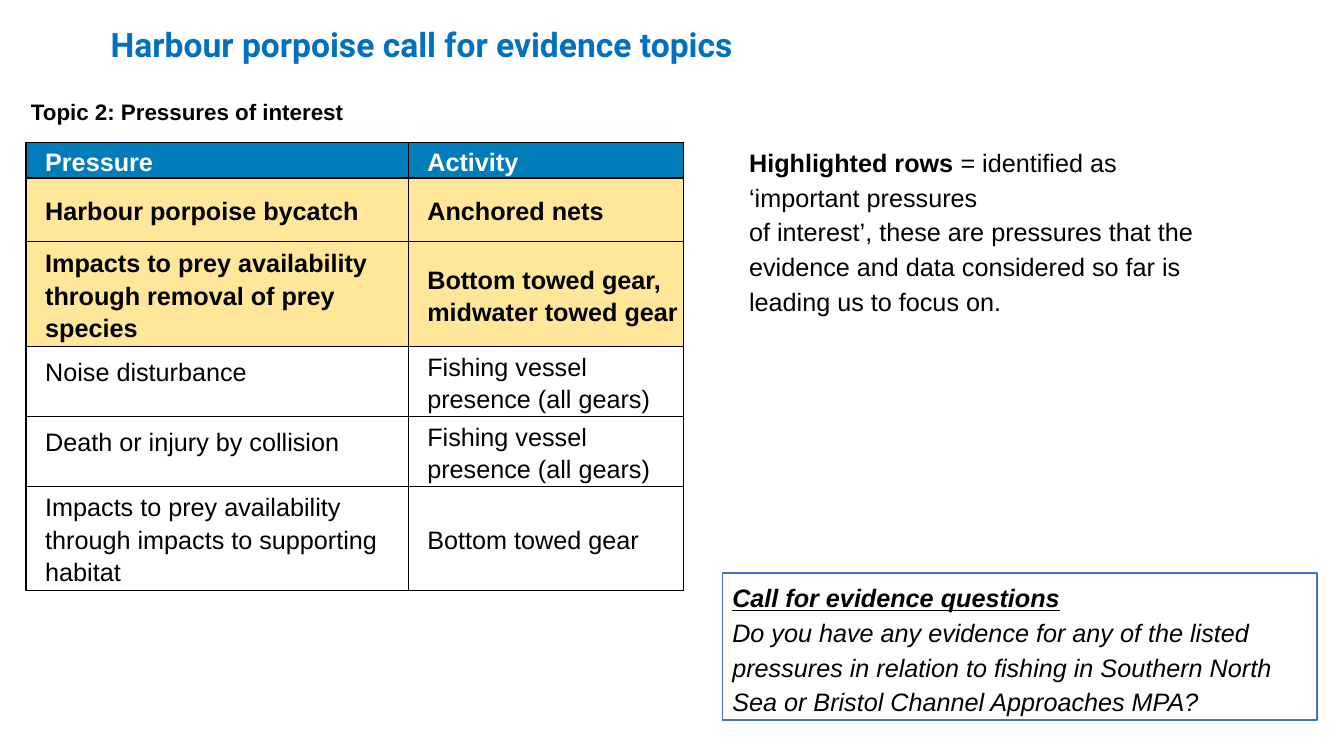
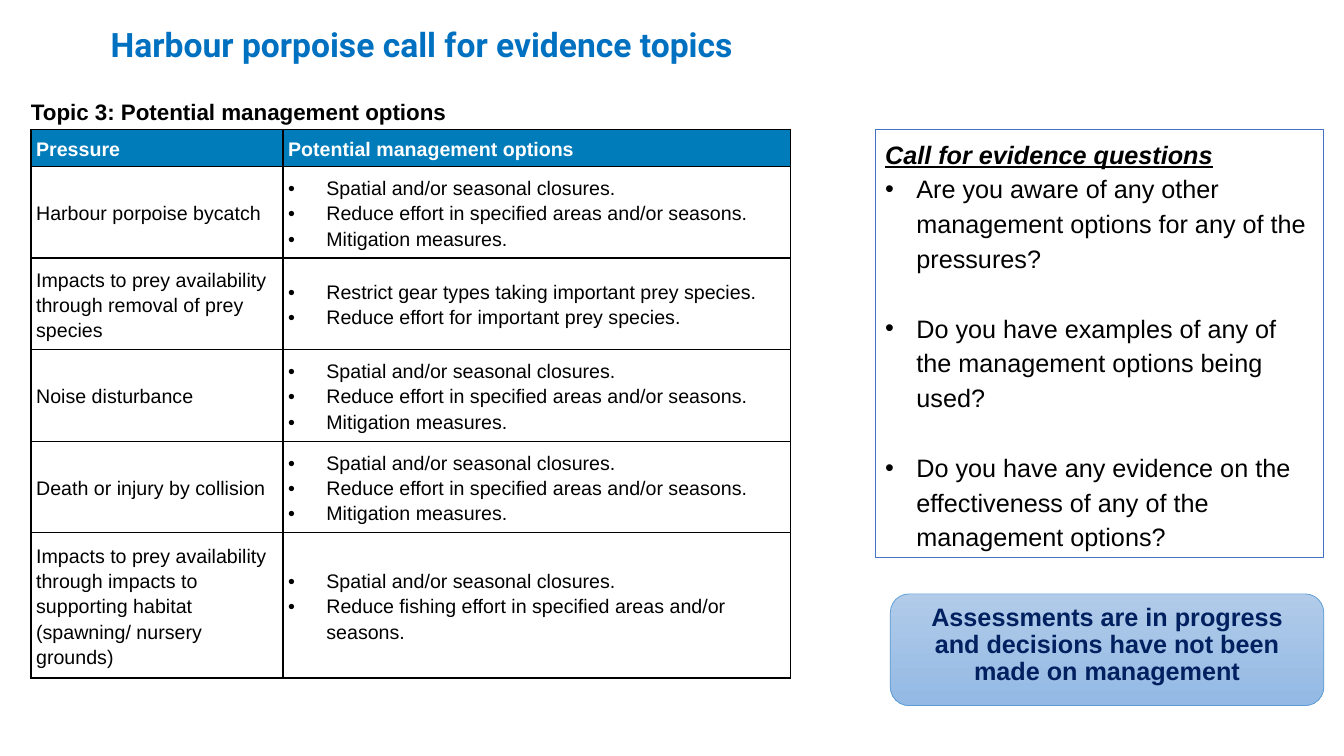
"""Build two slides on the harbour porpoise call for evidence topics."""
import pptx
import pptx.dml.color
import pptx.enum.shapes
import pptx.enum.text
import pptx.util
import lxml.etree

COLOURS = {
    "title": "0070C0", "header": "007CBA", "highlight": "FFE699", "outline": "4472C4",
    "black": "000000", "white": "FFFFFF", "navy": "002060",
    "notice_top": "B1CBE9", "notice_bottom": "93B9E4", "notice_edge": "5B9BD5",
}
RGB = {name: pptx.dml.color.RGBColor.from_string(code) for name, code in COLOURS.items()}
SHAPES = pptx.enum.shapes.MSO_SHAPE
ANCHOR = pptx.enum.text.MSO_ANCHOR
A = "{http://schemas.openxmlformats.org/drawingml/2006/main}"

deck = pptx.Presentation()
deck.slide_width = pptx.util.Inches(13.333)
deck.slide_height = pptx.util.Inches(7.5)
COL = deck.slide_width / 16
ROW = deck.slide_height / 9


def write(frame, lines, size=18, colour="black", bold=False, spacing=1.15, hang=0, font="Arial"):
    """Fill a text frame, with hanging bullets when hang is given."""
    frame.word_wrap = True
    frame.text = "\n".join(lines)
    for paragraph in frame.paragraphs:
        if hang:
            props = paragraph._p.get_or_add_pPr()
            props.set("marL", str(pptx.util.Inches(hang)))
            props.set("indent", str(-pptx.util.Inches(hang)))
            lxml.etree.SubElement(props, A + "buFont", typeface="Arial")
            lxml.etree.SubElement(props, A + "buChar", char="•")
        paragraph.line_spacing = spacing
        for run in paragraph.runs:
            run.font.name = font
            run.font.size = pptx.util.Pt(size)
            run.font.bold = bold
            run.font.color.rgb = RGB[colour]


def add_panel(slide, area, outline=None, width=1, kind=SHAPES.RECTANGLE):
    """Add a white panel placed in grid columns and rows."""
    left, top, wide, high = area
    panel = slide.shapes.add_shape(kind, int(left * COL), int(top * ROW), int(wide * COL), int(high * ROW))
    panel.shadow.inherit = False
    panel.fill.solid()
    panel.fill.fore_color.rgb = RGB["white"]
    if outline:
        panel.line.color.rgb = RGB[outline]
        panel.line.width = pptx.util.Pt(width)
    else:
        panel.line.fill.background()
    panel.text_frame.vertical_anchor = ANCHOR.TOP
    for paragraph in panel.text_frame.paragraphs:
        paragraph.alignment = pptx.enum.text.PP_ALIGN.LEFT
    return panel


closures = ["Spatial and/or seasonal closures."]
full_options = closures + ["Reduce effort in specified areas and/or seasons.", "Mitigation measures."]
topics = [
    {
        "heading": "Topic 2: Pressures of interest",
        "corner": (0.31, 1.7), "columns": [4.55, 3.28], "rows": [0.42, 0.76, 1.25, 0.83, 0.83, 1.24],
        "size": 18, "margins": (0.19, 0), "highlighted": [1, 2], "raised": [3, 4],
        "table": [
            ("Pressure", "Activity"),
            ("Harbour porpoise bycatch", "Anchored nets"),
            ("Impacts to prey availability through removal of prey species",
             "Bottom towed gear, midwater towed gear"),
            ("Noise disturbance", "Fishing vessel presence (all gears)"),
            ("Death or injury by collision", "Fishing vessel presence (all gears)"),
            ("Impacts to prey availability through impacts to supporting habitat", "Bottom towed gear"),
        ],
        "question_area": (8.6, 6.82, 7.08, 1.75), "question_hang": 0,
        "questions": ["Do you have any evidence for any of the listed pressures in relation to fishing "
                      "in Southern North Sea or Bristol Channel Approaches MPA?"],
    },
    {
        "heading": "Topic 3: Potential management options",
        "corner": (0.37, 1.54), "columns": [3, 6.04], "rows": [0.44, 1.09, 1.09, 1.09, 1.09, 1.73],
        "size": 14, "margins": (0.05, 0.05), "highlighted": [], "raised": [],
        "table": [
            ("Pressure", "Potential management options"),
            ("Harbour porpoise bycatch", full_options),
            ("Impacts to prey availability through removal of prey species",
             ["Restrict gear types taking important prey species.",
              "Reduce effort for important prey species."]),
            ("Noise disturbance", full_options),
            ("Death or injury by collision", full_options),
            ("Impacts to prey availability through impacts to supporting habitat\v(spawning/ nursery grounds)",
             closures + ["Reduce fishing effort in specified areas and/or seasons."]),
        ],
        "question_area": (10.42, 1.54, 5.34, 5.1), "question_hang": 0.31,
        "questions": ["Are you aware of any other management options for any of the pressures?",
                      "Do you have examples of any of the management options being used?",
                      "Do you have any evidence on the effectiveness of any of the management options?"],
    },
]

slides = []
for topic in topics:
    slide = deck.slides.add_slide(deck.slide_layouts[6])
    slides.append(slide)

    title = slide.shapes.add_textbox(int(1.2 * COL), int(0.23 * ROW), int(14.8 * COL), int(0.6 * ROW))
    write(title.text_frame, ["Harbour porpoise call for evidence topics"], 24, "title", True, 1.0, font="Roboto")
    heading = slide.shapes.add_textbox(int(0.25 * COL), int(1.1 * ROW), int(9.58 * COL), int(0.43 * ROW))
    write(heading.text_frame, [topic["heading"]], 16, bold=True, spacing=1.05)

    questions = add_panel(slide, topic["question_area"], "outline").text_frame
    write(questions, ["Call for evidence questions"] + topic["questions"], hang=topic["question_hang"])
    lead, *asked = questions.paragraphs
    lead_props = lead._p.get_or_add_pPr()
    for bullet in lead_props.findall(A + "buFont") + lead_props.findall(A + "buChar"):
        lead_props.remove(bullet)
    lead_props.set("marL", "0")
    lead_props.set("indent", "0")
    lead.runs[0].font.bold = lead.runs[0].font.italic = lead.runs[0].font.underline = True
    for paragraph in asked:
        paragraph.alignment = pptx.enum.text.PP_ALIGN.LEFT
        paragraph.runs[0].font.italic = not topic["question_hang"]
    for paragraph in asked[1:]:
        paragraph.space_before = pptx.util.Pt(25)

    left, top = topic["corner"]
    pressures = slide.shapes.add_table(
        len(topic["rows"]), len(topic["columns"]), int(left * COL), int(top * ROW),
        int(sum(topic["columns"]) * COL), int(sum(topic["rows"]) * ROW)).table
    pressures.first_row = pressures.horz_banding = False
    for column, width in zip(pressures.columns, topic["columns"]):
        column.width = int(width * COL)
    for row, height in zip(pressures.rows, topic["rows"]):
        row.height = int(height * ROW)

    side, other = (pptx.util.Inches(margin) for margin in topic["margins"])
    for r, entries in enumerate(topic["table"]):
        for c, entry in enumerate(entries):
            cell = pressures.cell(r, c)
            cell.margin_left = side
            cell.margin_right = cell.margin_top = cell.margin_bottom = other
            if r in topic["raised"] and c == 0:
                cell.margin_bottom = pptx.util.Inches(0.22)
            cell.vertical_anchor = ANCHOR.MIDDLE
            highlighted = r in topic["highlighted"]
            if r == 0 or highlighted:
                cell.fill.solid()
                cell.fill.fore_color.rgb = RGB["highlight" if highlighted else "header"]
            else:
                cell.fill.background()
            bulleted = isinstance(entry, list)
            write(cell.text_frame, entry if bulleted else [entry], topic["size"],
                  "black" if r else "white", r == 0 or highlighted, hang=0.38 if bulleted else 0)
            cell_props = cell._tc.get_or_add_tcPr()
            for position, edge in enumerate(["lnL", "lnR", "lnT", "lnB"]):
                border = lxml.etree.Element(A + edge, w=str(pptx.util.Pt(1)))
                paint = lxml.etree.SubElement(border, A + "solidFill")
                lxml.etree.SubElement(paint, A + "srgbClr", val=COLOURS["black"])
                cell_props.insert(position, border)

pressure_slide, options_slide = slides

legend = add_panel(pressure_slide, (8.8, 1.64, 5.96, 2.17)).text_frame
write(legend, ["Highlighted rows ",
               "of interest’, these are pressures that the evidence and data considered so far is",
               "leading us to focus on."])
meaning = legend.paragraphs[0].add_run()
meaning.text = "= identified as ‘important pressures"
meaning.font.name = "Arial"
meaning.font.size = pptx.util.Pt(18)
meaning.font.color.rgb = RGB["black"]
legend.paragraphs[0].runs[0].font.bold = True
for paragraph in legend.paragraphs:
    paragraph.alignment = pptx.enum.text.PP_ALIGN.LEFT

notice = add_panel(options_slide, (10.6, 7.07, 5.16, 1.33), "notice_edge", 0.5, SHAPES.ROUNDED_RECTANGLE)
notice.fill.gradient()
notice.fill.gradient_angle = 270
for stop, shade in zip(notice.fill.gradient_stops, ["notice_top", "notice_bottom"]):
    stop.color.rgb = RGB[shade]
write(notice.text_frame, ["Assessments are in progress and decisions have not been made on management"],
      colour="navy", bold=True, spacing=0.9)
notice.text_frame.paragraphs[0].alignment = pptx.enum.text.PP_ALIGN.CENTER

deck.save("out.pptx")
